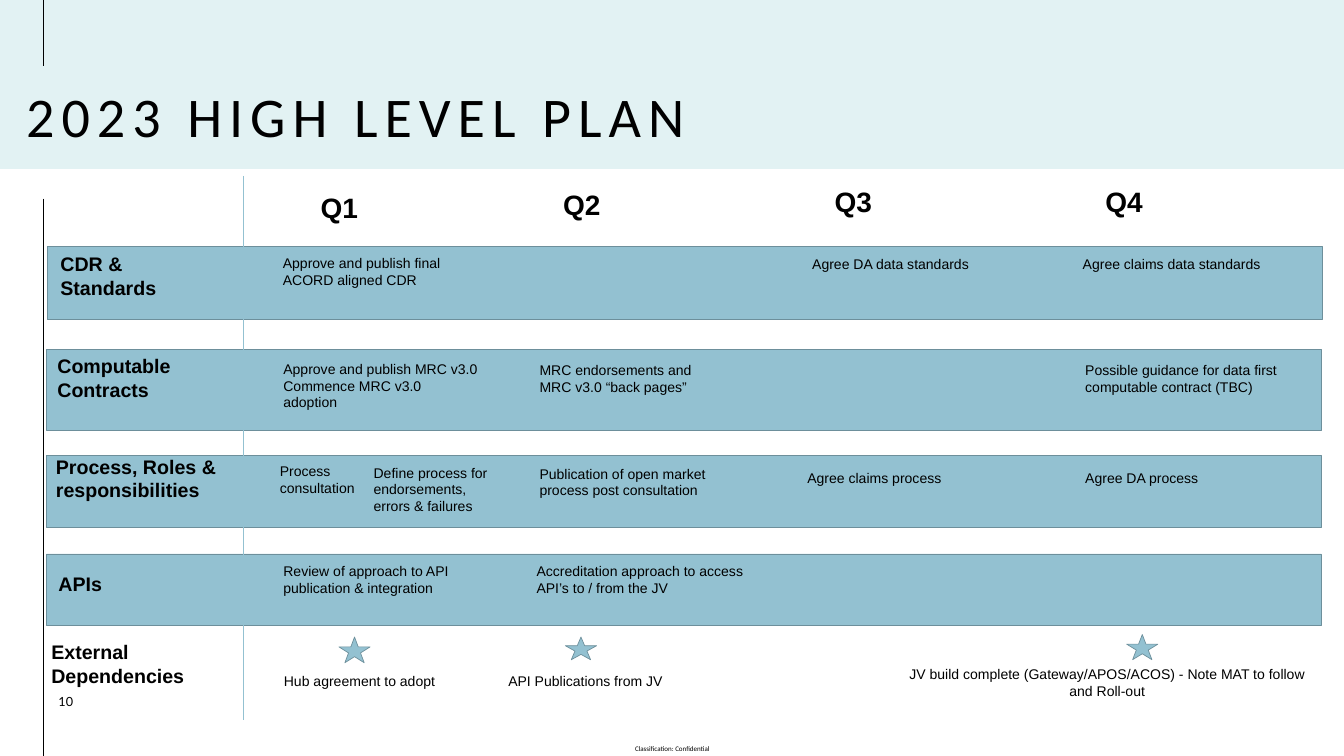
from lxml import etree
from pptx import Presentation, util as u
from pptx.dml.color import RGBColor
from pptx.enum import shapes, text
from pptx.oxml.ns import qn

PX = 9144
C = {"ink": "000000", "mint": "9FD5D8", "bar": "93C1D1", "edge": "6D8F9B", "white": "FFFFFF"}
LEFT, CENTER, RIGHT = text.PP_ALIGN.LEFT, text.PP_ALIGN.CENTER, text.PP_ALIGN.RIGHT

TITLE = "2023 HIGH LEVEL PLAN"
BARS = [(94, 489, 145), (92, 693, 161), (92, 904, 143), (92, 1099, 142)]
BAR_W = 2528
STARS = [(672, 1264, 51), (1121, 1264, 45), (2234, 1259, 50)]
STAR_W = 62
RULES = [(86, 0, 130, "ink", 2), (86, 394, 1500, "ink", 2), (483, 349, 1428, "bar", 0.5)]
QUARTERS = [("Q1", 626, 374), ("Q2", 1107, 368), ("Q3", 1645, 361), ("Q4", 2182, 362)]
STREAMS = [
    ("CDR & Standards", 110, 495, 297, 104),
    ("Computable Contracts", 104, 698, 353, 104),
    ("Process, Roles & responsibilities", 101, 897, 382, 104),
    ("APIs", 106, 1130, 353, 57),
    ("External Dependencies", 92, 1265, 413, 104),
]
TASKS = [
    ("Approve and publish final ACORD aligned CDR", 551, 501, 350, 77),
    ("Agree claims data standards", 2137, 502, 385, 44),
    ("Approve and publish MRC v3.0 Commence MRC v3.0\nadoption", 552, 710, 439, 111),
    ("MRC endorsements and MRC v3.0 “back pages”", 1060, 712, 358, 77),
    ("Possible guidance for data first computable contract (TBC)", 2142, 712, 462, 77),
    ("Process consultation", 545, 913, 265, 77),
    ("Define process for endorsements, errors & failures", 731, 916, 265, 111),
    ("Publication of open market process post consultation", 1060, 918, 399, 77),
    ("Agree claims process", 1591, 927, 399, 44),
    ("Agree DA process", 2142, 926, 399, 44),
    ("Review of approach to API publication & integration", 552, 1112, 439, 77),
    ("Accreditation approach to access API’s to / from the JV", 1054, 1112, 439, 77),
]
CENTERED = [
    ("Agree DA data standards", 1591, 502, 350, 44),
    ("Hub agreement to adopt", 496, 1329, 434, 44),
    ("API Publications from JV", 914, 1329, 494, 44),
    ("JV build complete (Gateway/APOS/ACOS) - Note MAT to follow and Roll-out",
     1776, 1315, 839, 77),
]

prs = Presentation()
prs.slide_width, prs.slide_height = 2665 * PX, 1500 * PX
s = prs.slides.add_slide(prs.slide_layouts[5])


def color(name):
    return RGBColor.from_string(C[name])


def style(p, size, font, bold=False, align=LEFT):
    p.alignment = align
    p.font.size, p.font.name, p.font.bold = u.Pt(size), font, bold
    p.font.color.rgb = color("ink")


def no_insets(tf):
    tf.margin_left = tf.margin_right = tf.margin_top = tf.margin_bottom = 0


def add_shape(kind, x, y, w, h, fill, edge=None):
    sp = s.shapes.add_shape(kind, x * PX, y * PX, w * PX, h * PX)
    sp.shadow.inherit = False
    sp.fill.solid()
    sp.fill.fore_color.rgb = color(fill)
    if edge:
        sp.line.color.rgb = color(edge)
        sp.line.width = u.Pt(1)
    else:
        sp.line.fill.background()
    return sp


def add_rule(x, top, bottom, name, width):
    line = s.shapes.add_connector(shapes.MSO_CONNECTOR.STRAIGHT, x * PX, top * PX, x * PX, bottom * PX)
    line.line.color.rgb = color(name)
    line.line.width = u.Pt(width)
    etree.SubElement(line.element.spPr, qn("a:effectLst"))


def add_text(words, x, y, w, h, size=20, font="Arial", bold=False, align=LEFT):
    sp = s.shapes.add_textbox(x * PX, y * PX, w * PX, h * PX)
    tf = sp.text_frame
    tf.word_wrap = True
    tf.auto_size = text.MSO_AUTO_SIZE.SHAPE_TO_FIT_TEXT
    tf.text = words
    for p in tf.paragraphs:
        style(p, size, font, bold, align)
    return sp


band = add_shape(shapes.MSO_SHAPE.RECTANGLE, 0, 0, 2665, 335, "mint")
tint = band.element.spPr.find(qn("a:solidFill"))[0]
etree.SubElement(tint, qn("a:alpha"), val="30000")

title = s.shapes.title
title.element.getparent().append(title.element)
title.left, title.top, title.width, title.height = (n * PX for n in (52, 177, 2613, 138))
tf = title.text_frame
tf.text = TITLE
tf.vertical_anchor = text.MSO_ANCHOR.TOP
tf.auto_size = text.MSO_AUTO_SIZE.NONE
no_insets(tf)
p = tf.paragraphs[0]
style(p, 80, "Calibri")
p.line_spacing = 0.9
p.runs[0]._r.get_or_add_rPr().set("spc", "1000")

for x, y, h in BARS:
    add_shape(shapes.MSO_SHAPE.RECTANGLE, x, y, BAR_W, h, "bar", "edge")
for rule in RULES:
    add_rule(*rule)
for x, y, h in STARS:
    add_shape(shapes.MSO_SHAPE.STAR_5_POINT, x, y, STAR_W, h, "bar", "edge")

for name, x, y in QUARTERS:
    add_text(name, x, y, 256, 77, size=40, bold=True)
for stream in STREAMS:
    add_text(*stream, size=28, bold=True)
for task in TASKS:
    add_text(*task)
for label in CENTERED:
    sp = add_text(*label, align=CENTER)
sp.fill.solid()
sp.fill.fore_color.rgb = color("white")

number = add_text("10", 9, 1377, 136, 39, size=18, font="Lato", align=RIGHT)
no_insets(number.text_frame)
number.text_frame.auto_size = text.MSO_AUTO_SIZE.NONE
footer = add_text("Classification: Confidential", 1242, 1471, 182, 29, size=10, font="Calibri", align=CENTER)
no_insets(footer.text_frame)
footer.text_frame.vertical_anchor = text.MSO_ANCHOR.MIDDLE

prs.save("out.pptx")
